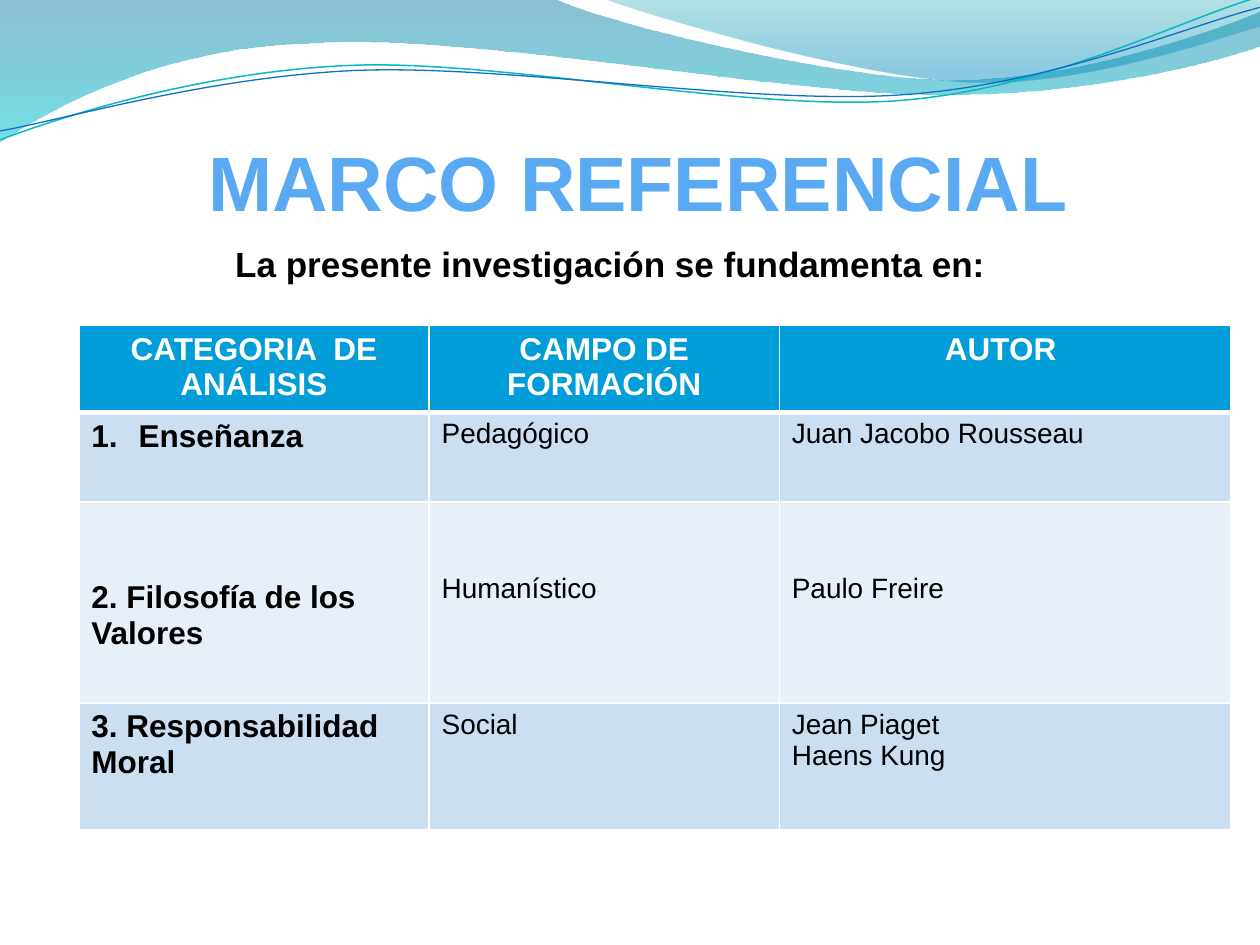
from lxml.etree import SubElement
from pptx import Presentation
from pptx.dml.color import RGBColor
from pptx.enum.text import MSO_ANCHOR, PP_ALIGN
from pptx.oxml import parse_xml
from pptx.oxml.ns import nsdecls, qn
from pptx.util import Cm, Pt

COLORS = {
    "title": "59AAF2", "text": "000000", "white": "FFFFFF", "header": "009DD9",
    "band_dark": "CCDFF1", "band_light": "E7EFF8",
    "wave_blue": "0074A1", "wave_cyan": "00C6CF",
    "crest_teal": "00A1A9", "crest_blue": "008BBF",
    "line_teal": "0AB8BF", "line_blue": "0F6FC6",
}
FONT = "Arial"

# Outlines in cm: two numbers are a straight step, six are a Bezier curve.
WAVE = [(0, 0), (11.18, -0.03), (12.09, 0.43, 16.87, 1.6, 19.25, 1.6),
        (21.67, 1.6, 24.33, 0.66, 25.4, 0.23), (25.43, 0.91),
        (24.97, 1.12, 22.1, 1.93, 18.95, 1.91),
        (15.8, 1.91, 9.7, 0.71, 6.53, 0.86),
        (3.28, 0.91, 1.17, 2.11, -0.03, 2.87), (0, 0)]
CREST = [(12.17, -0.03), (12.93, 0.28, 17.32, 1.57, 19.53, 1.65),
         (21.74, 1.75, 24.41, 0.81, 25.4, 0.53), (25.4, 0), (12.17, -0.03)]
TEAL_LINE = [(0, 2.82), (1.22, 2.36, 4.01, 1.45, 7.04, 1.32),
             (10.03, 1.19, 15.06, 2.26, 18.11, 2.03),
             (21.16, 1.8, 23.83, 0.38, 25.35, -0.05)]
BLUE_LINE = [(0, 2.64), (1.19, 2.44, 4.17, 1.55, 7.19, 1.42),
             (10.24, 1.3, 15.16, 2.13, 18.21, 1.91),
             (21.23, 1.7, 23.9, 0.53, 25.4, 0.15)]

HEADERS = ["CATEGORIA  DE ANÁLISIS", "CAMPO DE FORMACIÓN", "AUTOR "]
ROWS = [
    ["Enseñanza", "Pedagógico", "Juan Jacobo Rousseau"],
    ["2. Filosofía de los Valores", "Humanístico", "Paulo Freire"],
    ["3. Responsabilidad Moral", "Social", "Jean Piaget\nHaens Kung"],
]
COLUMN_WIDTHS = [7.06, 7.06, 9.1]
ROW_HEIGHTS = [1.75, 1.81, 4.05, 2.55]


def rgb(name):
    return RGBColor.from_string(COLORS[name])


def add_outline(slide, outline, close):
    """Draw all points as straight steps, then join each curve's three into one."""
    points = [(Cm(x), Cm(y)) for step in outline for x, y in zip(step[::2], step[1::2])]
    builder = slide.shapes.build_freeform(*points[0])
    builder.add_line_segments(points[1:], close=close)
    shape = builder.convert_to_shape()
    shape.shadow.inherit = False
    segments = iter(list(shape.element.iter(qn("a:lnTo"))))
    for step in outline[1:]:
        segment = next(segments)
        if len(step) == 6:
            segment.tag = qn("a:cubicBezTo")
            for _ in range(2):
                extra = next(segments)
                segment.append(extra[0])
                extra.getparent().remove(extra)
    return shape


def add_gradient_wave(slide, outline, stops):
    """Each stop is (position, colour name, opacity in percent)."""
    shape = add_outline(slide, outline, close=True)
    shape.line.fill.background()
    shape.fill.gradient()
    shape.fill.gradient_angle = 270
    for stop, (position, color, _) in zip(shape.fill.gradient_stops, stops):
        stop.position = position
        stop.color.rgb = rgb(color)
    gradient_colors = shape.element.spPr.find(qn("a:gradFill")).iter(qn("a:srgbClr"))
    for element, (_, _, opacity) in zip(gradient_colors, stops):
        SubElement(element, qn("a:alpha"), val=str(opacity * 1000))


def add_wave_line(slide, outline, color, width):
    shape = add_outline(slide, outline, close=False)
    shape.fill.background()
    shape.line.color.rgb = rgb(color)
    shape.line.width = Pt(width)


def format_paragraph(paragraph, size, color, bold, alignment):
    paragraph.alignment = alignment
    font = paragraph.font
    font.name, font.size, font.bold = FONT, Pt(size), bold
    font.color.rgb = rgb(color)


def fill_heading(shape, text, size, color):
    frame = shape.text_frame
    frame.word_wrap = True
    frame.vertical_anchor = MSO_ANCHOR.MIDDLE
    frame.text = text
    format_paragraph(frame.paragraphs[0], size, color, True, PP_ALIGN.CENTER)


def add_title(slide, text):
    title = slide.shapes.title
    title.left, title.top, title.width, title.height = Cm(2.37), Cm(2.57), Cm(21), Cm(2.13)
    fill_heading(title, text, 44, "title")


def add_subtitle(slide, text):
    box = slide.shapes.add_textbox(Cm(1.79), Cm(4.75), Cm(21.03), Cm(1.12))
    fill_heading(box, text, 20, "text")


def set_borders(cell, top, bottom):
    properties = cell._tc.get_or_add_tcPr()
    for index, (side, width) in enumerate(zip("LRTB", (1, 1, top, bottom))):
        properties.insert(index, parse_xml(
            f'<a:ln{side} {nsdecls("a")} w="{Pt(width)}"><a:solidFill>'
            f'<a:srgbClr val="{COLORS["white"]}"/></a:solidFill></a:ln{side}>'))


def number_paragraph(paragraph):
    properties = paragraph._p.get_or_add_pPr()
    properties.set("marL", str(Cm(0.95)))
    properties.set("indent", str(-Cm(0.95)))
    SubElement(properties, qn("a:buFont"), typeface="+mj-lt")
    SubElement(properties, qn("a:buAutoNum"), type="arabicPeriod")


def fill_cell(cell, text, row, column):
    is_header, is_category = row == 0, column == 0
    cell.text = text
    cell.fill.solid()
    cell.fill.fore_color.rgb = rgb(
        "header" if is_header else "band_dark" if row % 2 else "band_light")
    set_borders(cell, top=3 if row == 1 else 1, bottom=3 if is_header else 1)
    if row == 2:
        cell.margin_top = Cm(1.58 if is_category else 1.43)
    if row == 1 and is_category:
        number_paragraph(cell.text_frame.paragraphs[0])
    emphasized = is_header or is_category
    for paragraph in cell.text_frame.paragraphs:
        format_paragraph(paragraph, 18 if emphasized else 16,
                         "white" if is_header else "text", emphasized,
                         PP_ALIGN.CENTER if is_header else PP_ALIGN.LEFT)


def add_framework_table(slide):
    frame = slide.shapes.add_table(
        len(ROW_HEIGHTS), len(COLUMN_WIDTHS), Cm(1.59), Cm(6.56),
        Cm(sum(COLUMN_WIDTHS)), Cm(sum(ROW_HEIGHTS)))
    table = frame.table
    for column, width in zip(table.columns, COLUMN_WIDTHS):
        column.width = Cm(width)
    for row, height in zip(table.rows, ROW_HEIGHTS):
        row.height = Cm(height)
    for row_index, texts in enumerate([HEADERS] + ROWS):
        for column_index, text in enumerate(texts):
            fill_cell(table.cell(row_index, column_index), text, row_index, column_index)


def main():
    presentation = Presentation()
    presentation.slide_width, presentation.slide_height = Cm(25.4), Cm(19.05)
    slide = presentation.slides.add_slide(presentation.slide_layouts[5])
    add_gradient_wave(slide, WAVE, [(0, "wave_blue", 45), (1, "wave_cyan", 55)])
    add_gradient_wave(slide, CREST, [(0, "crest_teal", 30), (0.8, "crest_blue", 45)])
    add_wave_line(slide, TEAL_LINE, "line_teal", 0.85)
    add_wave_line(slide, BLUE_LINE, "line_blue", 0.75)
    add_title(slide, "MARCO REFERENCIAL")
    add_framework_table(slide)
    add_subtitle(slide, "La presente investigación se fundamenta en:")
    presentation.save("out.pptx")


if __name__ == "__main__":
    main()
